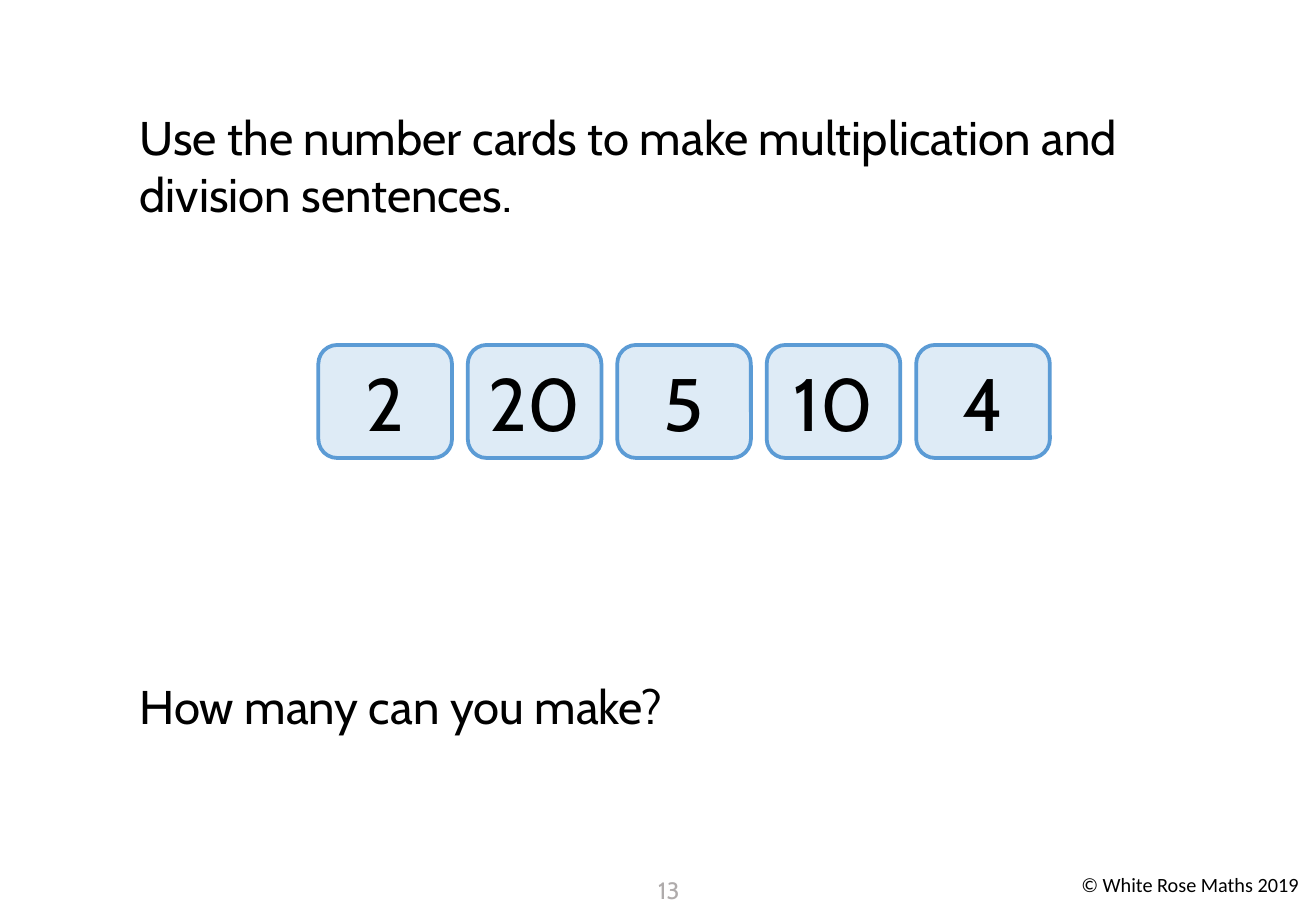
from lxml.etree import SubElement
from pptx import Presentation
from pptx.dml.color import RGBColor
from pptx.enum.shapes import MSO_SHAPE
from pptx.enum.text import MSO_ANCHOR, MSO_AUTO_SIZE, PP_ALIGN
from pptx.oxml.ns import qn
from pptx.util import Pt


def color(hex_string):
    return RGBColor.from_string(hex_string)


class NumberCardSlide:
    """Adds consistently styled elements to one number card slide."""

    font_name = "Cabin"
    text_color = "000000"
    card_color = "5B9BD5"

    def __init__(self, presentation):
        title_only = presentation.slide_layouts[5]
        self.slide = presentation.slides.add_slide(title_only)

    def set_text(self, shape, text, size, align=PP_ALIGN.LEFT,
                 anchor=MSO_ANCHOR.TOP, font_name=font_name, text_color=text_color):
        frame = shape.text_frame
        frame.text = text
        frame.word_wrap = True
        frame.auto_size = MSO_AUTO_SIZE.NONE
        frame.vertical_anchor = anchor
        paragraph = frame.paragraphs[0]
        paragraph.alignment = align
        paragraph.font.name = font_name
        paragraph.font.size = Pt(size)
        paragraph.font.color.rgb = color(text_color)

    def title(self, text, left, top, width, height, size):
        shape = self.slide.shapes.title
        shape.left, shape.top = Pt(left), Pt(top)
        shape.width, shape.height = Pt(width), Pt(height)
        self.set_text(shape, text, size)

    def text(self, text, left, top, width, height, size, **style):
        shape = self.slide.shapes.add_textbox(
            Pt(left), Pt(top), Pt(width), Pt(height))
        self.set_text(shape, text, size, **style)

    def card(self, number, left, top, width, height):
        shape = self.slide.shapes.add_shape(
            MSO_SHAPE.ROUNDED_RECTANGLE, Pt(left), Pt(top), Pt(width), Pt(height))
        shape.shadow.inherit = False
        shape.fill.solid()
        shape.fill.fore_color.rgb = color(self.card_color)
        fill_color = shape.element.spPr.find(qn("a:solidFill"))[0]
        SubElement(fill_color, qn("a:alpha"), val="20000")
        shape.line.color.rgb = color(self.card_color)
        shape.line.width = Pt(2.25)
        self.set_text(shape, str(number), 44, PP_ALIGN.CENTER, MSO_ANCHOR.MIDDLE)


def main():
    presentation = Presentation()
    presentation.slide_width = Pt(779.76)
    presentation.slide_height = Pt(540)
    slide = NumberCardSlide(presentation)

    slide.title("Use the number cards to make multiplication and division sentences.",
                75.6, 60.5, 634.3, 76, 28)
    for index, number in enumerate([2, 20, 5, 10, 4]):
        slide.card(number, 188.64 + index * 88.56, 204.5, 79.2, 67)
    slide.text("How many can you make?", 75.6, 397.7, 634.3, 43, 28)
    slide.text("13", 378, 515.5, 36.7, 24, 14,
               align=PP_ALIGN.CENTER, text_color="AFABAB")
    slide.text("© White Rose Maths 2019", 633.6, 513.4, 146, 21.6, 12,
               font_name="Calibri")

    presentation.save("out.pptx")


if __name__ == "__main__":
    main()
